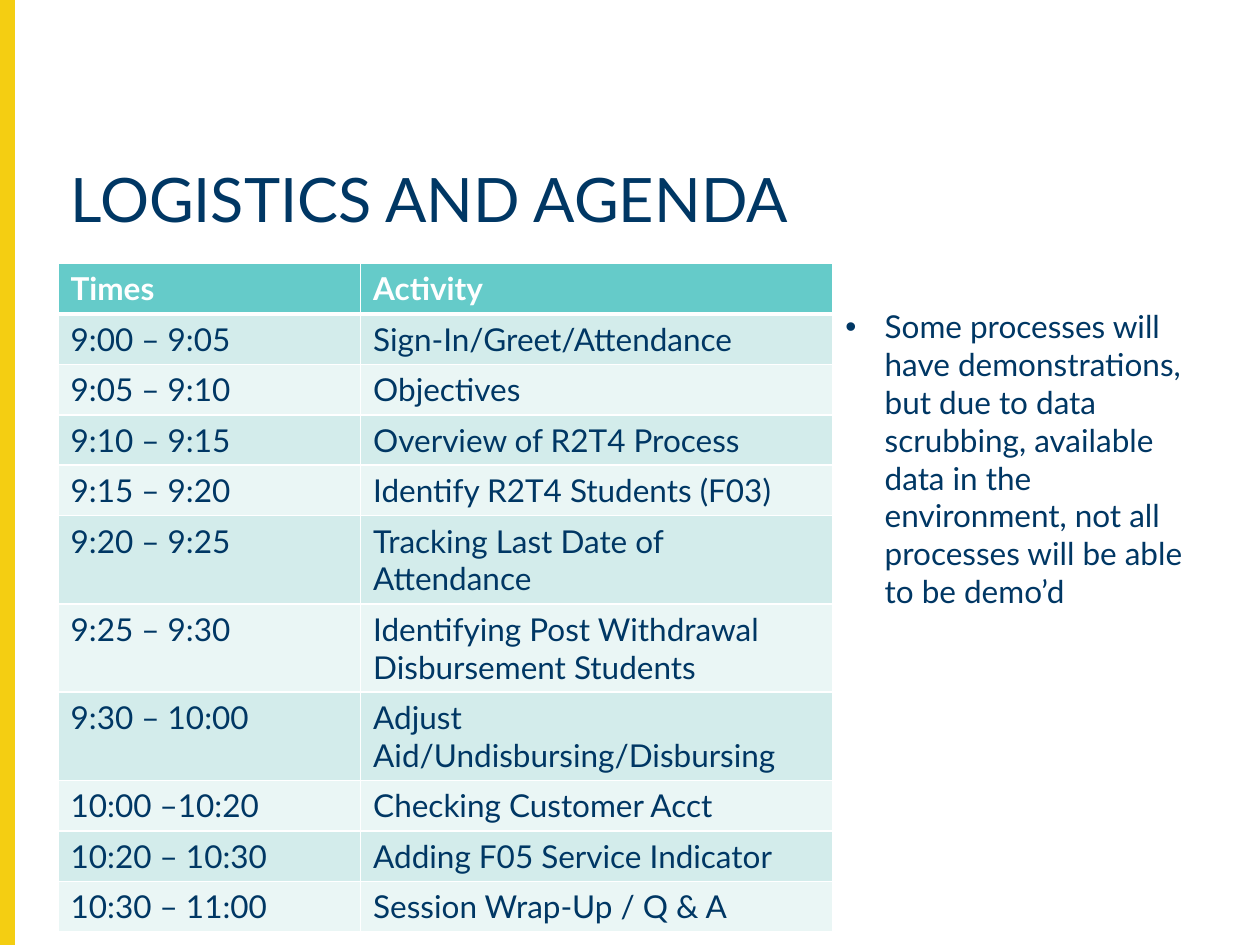
import pptx
import pptx.dml.color
import pptx.enum.shapes
import pptx.enum.text
import pptx.oxml
import pptx.oxml.ns
import pptx.util
from pptx.util import Cm

# Content
TITLE = "LOGISTICS AND AGENDA"
AGENDA = [
    ("Times", "Activity"),
    ("9:00 – 9:05", "Sign-In/Greet/Attendance"),
    ("9:05 – 9:10", "Objectives"),
    ("9:10 – 9:15", "Overview of R2T4 Process"),
    ("9:15 – 9:20", "Identify R2T4 Students (F03)"),
    ("9:20 – 9:25", "Tracking Last Date of Attendance"),
    ("9:25 – 9:30", "Identifying Post Withdrawal Disbursement Students"),
    ("9:30 – 10:00", "Adjust Aid/Undisbursing/Disbursing"),
    ("10:00 –10:20", "Checking Customer Acct"),
    ("10:20 – 10:30", "Adding F05 Service Indicator"),
    ("10:30 – 11:00", "Session Wrap-Up / Q & A"),
]
NOTE = ("Some processes will have demonstrations, but due to data scrubbing, "
        "available data in the environment, not all processes will be able to be demo’d")

THEME = {
    "font": "Lato", "title_size": 35, "text_size": 18,
    "navy": "003764", "white": "FFFFFF", "yellow": "F4CE12",
    "header": "65CBC9", "bands": ("EAF6F5", "D3ECEB"),
}

# Layout
SLIDE_WIDTH, SLIDE_HEIGHT = Cm(25.4), Cm(19.05)
BAR_WIDTH = Cm(0.28)
LEFT, TABLE_TOP = Cm(1.17), Cm(5.31)
TITLE_BOX = {"left": LEFT, "top": Cm(3.3), "width": Cm(23.7), "height": Cm(2.01)}
COLUMN_WIDTHS = (Cm(6.1), Cm(9.52))
ROW_HEIGHT = Cm(0.94)
NOTE_BOX = {"left": LEFT + sum(COLUMN_WIDTHS), "top": Cm(6.07),
            "width": Cm(7.72), "height": Cm(6.4)}
NOTE_INDENT = Cm(0.79)


def set_attributes(target, values):
    for name, value in values.items():
        setattr(target, name, value)


def color(value):
    return pptx.dml.color.RGBColor.from_string(value)


def fill_solid(target, value):
    target.fill.solid()
    target.fill.fore_color.rgb = color(value)


def write(text_frame, text, size, text_color, bold=False, **paragraph_format):
    paragraph = text_frame.paragraphs[0]
    set_attributes(paragraph, paragraph_format)
    run = paragraph.add_run()
    run.text = text
    set_attributes(run.font, {"name": THEME["font"], "size": pptx.util.Pt(size),
                              "bold": bold})
    run.font.color.rgb = color(text_color)
    return paragraph


def add_borders(cell, bottom_width):
    properties = cell._tc.get_or_add_tcPr()
    for side, points in (("L", 1), ("R", 1), ("T", 1), ("B", bottom_width)):
        properties.append(pptx.oxml.parse_xml(
            f'<a:ln{side} {pptx.oxml.ns.nsdecls("a")} w="{pptx.util.Pt(points)}">'
            f'<a:solidFill><a:srgbClr val="{THEME["white"]}"/></a:solidFill></a:ln{side}>'))


def add_bar(slide):
    bar = slide.shapes.add_shape(pptx.enum.shapes.MSO_SHAPE.RECTANGLE,
                                 0, 0, BAR_WIDTH, SLIDE_HEIGHT)
    bar.shadow.inherit = False
    fill_solid(bar, THEME["yellow"])
    bar.line.color.rgb = color(THEME["yellow"])
    bar.line.width = pptx.util.Pt(1)


def add_title(slide):
    title = slide.shapes.title
    set_attributes(title, TITLE_BOX)
    set_attributes(title.text_frame, {
        "vertical_anchor": pptx.enum.text.MSO_ANCHOR.TOP,
        "auto_size": pptx.enum.text.MSO_AUTO_SIZE.NONE, "word_wrap": True})
    write(title.text_frame, TITLE, THEME["title_size"], THEME["navy"],
          alignment=pptx.enum.text.PP_ALIGN.LEFT, line_spacing=0.9)


def add_agenda(slide):
    table = slide.shapes.add_table(
        len(AGENDA), len(COLUMN_WIDTHS), LEFT, TABLE_TOP,
        sum(COLUMN_WIDTHS), ROW_HEIGHT * len(AGENDA)).table
    for column, width in zip(table.columns, COLUMN_WIDTHS):
        column.width = width
    for row_index, texts in enumerate(AGENDA):
        is_header = row_index == 0
        table.rows[row_index].height = ROW_HEIGHT
        for column_index, text in enumerate(texts):
            cell = table.cell(row_index, column_index)
            add_borders(cell, 3 if is_header else 1)
            fill_solid(cell, THEME["header"] if is_header else THEME["bands"][row_index % 2])
            write(cell.text_frame, text, THEME["text_size"],
                  THEME["white"] if is_header else THEME["navy"], bold=is_header)


def add_note(slide):
    body = slide.placeholders[1]
    set_attributes(body, NOTE_BOX)
    set_attributes(body.text_frame, {
        "auto_size": pptx.enum.text.MSO_AUTO_SIZE.SHAPE_TO_FIT_TEXT, "word_wrap": True})
    paragraph = write(body.text_frame, NOTE, THEME["text_size"], THEME["navy"],
                      space_before=pptx.util.Pt(0), line_spacing=1.0)
    # Hanging bullet
    properties = paragraph._p.get_or_add_pPr()
    properties.set("marL", str(NOTE_INDENT))
    properties.set("indent", str(-NOTE_INDENT))
    properties.append(pptx.oxml.parse_xml(
        f'<a:buChar {pptx.oxml.ns.nsdecls("a")} char="•"/>'))


def main():
    presentation = pptx.Presentation()
    set_attributes(presentation, {"slide_width": SLIDE_WIDTH, "slide_height": SLIDE_HEIGHT})
    slide = presentation.slides.add_slide(presentation.slide_layouts[1])
    for add_part in (add_bar, add_title, add_agenda, add_note):
        add_part(slide)
    presentation.save("out.pptx")


if __name__ == "__main__":
    main()
